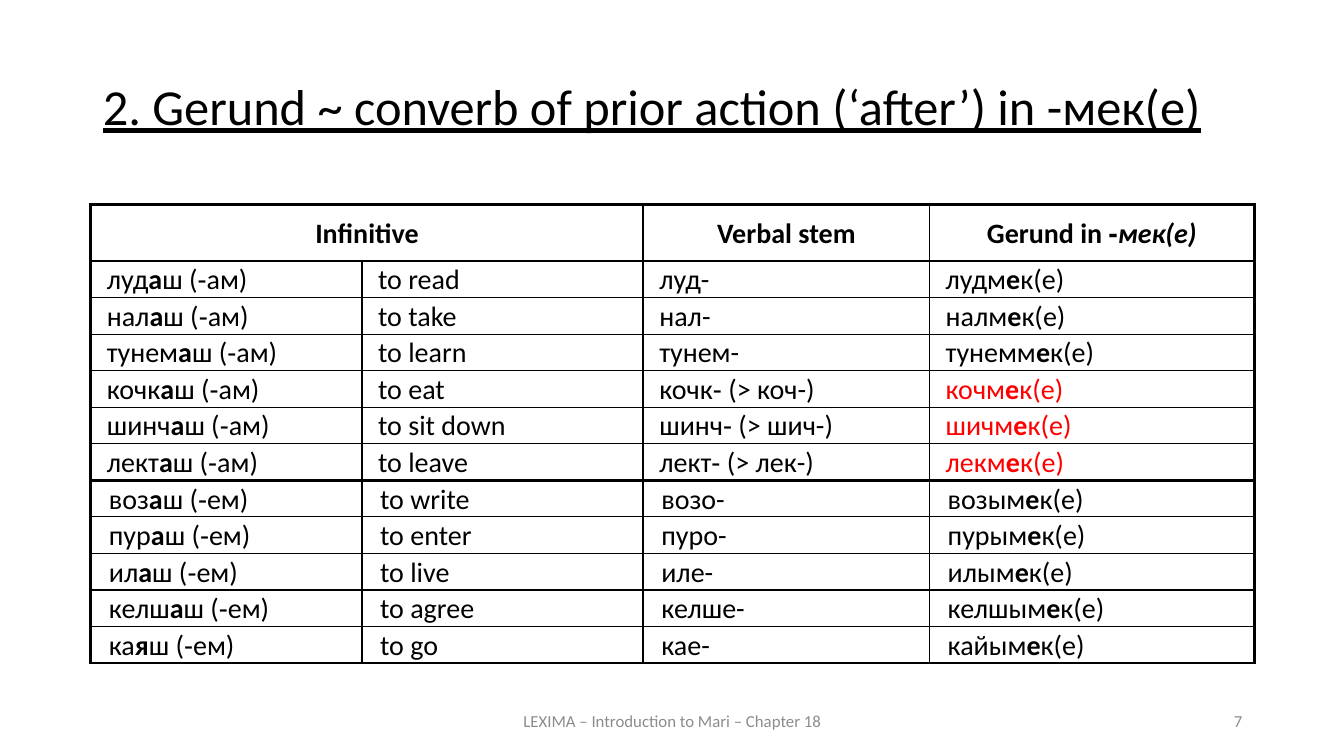
from dataclasses import dataclass

import pptx
import pptx.dml.color
import pptx.enum.text
import pptx.oxml
import pptx.oxml.ns
import pptx.util

Inches = pptx.util.Inches
Pt = pptx.util.Pt
RGB = pptx.dml.color.RGBColor
ALIGN = pptx.enum.text.PP_ALIGN
ANCHOR = pptx.enum.text.MSO_ANCHOR


@dataclass(frozen=True)
class Theme:
    font: str = "Calibri"
    ink: str = "000000"
    accent: str = "FF0000"
    muted: str = "8C8C8C"
    title_size: int = 36
    table_size: int = 20
    footer_size: int = 12
    thin: float = 1
    medium: float = 1.5
    thick: float = 2.25


THEME = Theme()

# Verb groups: conjugation ending, side inset, then
# (infinitive stem, stressed vowel, meaning, verbal stem, gerund stem, highlighted)
VERB_GROUPS = [
    ("ам", 0.16, [
        ("луд", "а", "to read", "луд-", "лудм", False),
        ("нал", "а", "to take", "нал-", "налм", False),
        ("тунем", "а", "to learn", "тунем-", "тунемм", False),
        ("кочк", "а", "to eat", "кочк‑ (> коч-)", "кочм", True),
        ("шинч", "а", "to sit down", "шинч‑ (> шич-)", "шичм", True),
        ("лект", "а", "to leave", "лект‑ (> лек-)", "лекм", True),
    ]),
    ("ем", 0.18, [
        ("воз", "а", "to write", "возо-", "возым", False),
        ("пур", "а", "to enter", "пуро-", "пурым", False),
        ("ил", "а", "to live", "иле-", "илым", False),
        ("келш", "а", "to agree", "келше-", "келшым", False),
        ("ка", "я", "to go", "кае-", "кайым", False),
    ]),
]

COLUMN_WIDTHS = [2.69, 2.79, 2.84, 3.22]
HEADER_HEIGHT, TABLE_HEIGHT = 0.56, 4.55


def add_run(p, text, size, color=THEME.ink, bold=False, italic=False):
    r = p.add_run()
    r.text = text
    r.font.name = THEME.font
    r.font.size = Pt(size)
    r.font.color.rgb = RGB.from_string(color)
    r.font.bold = bold
    r.font.italic = italic
    return r


def add_title(s, text):
    sp = s.shapes.title
    sp.left, sp.top = Inches(0.92), Inches(0.76)
    sp.width, sp.height = Inches(11.5), Inches(0.83)
    tf = sp.text_frame
    tf.auto_size = pptx.enum.text.MSO_AUTO_SIZE.NONE
    tf.vertical_anchor = ANCHOR.TOP
    p = tf.paragraphs[0]
    p.alignment = ALIGN.JUSTIFY
    p.line_spacing = 0.9
    add_run(p, text, THEME.title_size).font.underline = True


def add_footer(s, text, left, width, align):
    sp = s.shapes.add_textbox(Inches(left), Inches(6.95), Inches(width), Inches(0.4))
    tf = sp.text_frame
    tf.word_wrap = True
    tf.vertical_anchor = ANCHOR.MIDDLE
    p = tf.paragraphs[0]
    p.alignment = align
    add_run(p, text, THEME.footer_size, THEME.muted)


def set_border(cell, side, width):
    ln = pptx.oxml.parse_xml(
        f'<a:ln{side} {pptx.oxml.ns.nsdecls("a")} w="{Pt(width)}">'
        f'<a:solidFill><a:srgbClr val="{THEME.ink}"/></a:solidFill></a:ln{side}>')
    cell._tc.get_or_add_tcPr().append(ln)


def fill_cell(cell, runs, inset, align=ALIGN.JUSTIFY, color=THEME.ink):
    """Write (text, bold, italic) runs into a cell."""
    cell.margin_left = cell.margin_right = Inches(inset)
    cell.margin_top, cell.margin_bottom = Inches(0.02), 0
    p = cell.text_frame.paragraphs[0]
    p.alignment = align
    for text, bold, italic in runs:
        add_run(p, text, THEME.table_size, color, bold, italic)


def stressed(before, vowel, after):
    return [(before, False, False), (vowel, True, False), (after, False, False)]


def draw_grid(table):
    """Thick frame, header rule and group rule; thin lines elsewhere."""
    v = [THEME.thick, THEME.thin, THEME.medium, THEME.medium, THEME.thick]
    h = [THEME.thin] * (len(table.rows) + 1)
    h[0] = h[-1] = h[1] = THEME.thick
    h[1 + len(VERB_GROUPS[0][2])] = THEME.thick
    for i, row in enumerate(table.rows):
        for j, cell in enumerate(row.cells):
            if not cell.is_spanned:
                set_border(cell, "L", v[j])
            set_border(cell, "R", v[j + (2 if cell.is_merge_origin else 1)])
            set_border(cell, "T", h[i])
            set_border(cell, "B", h[i + 1])
            cell.fill.background()


def add_verb_table(s):
    n = sum(len(verbs) for _, _, verbs in VERB_GROUPS)
    table = s.shapes.add_table(n + 1, len(COLUMN_WIDTHS), Inches(0.9), Inches(2.03),
                               Inches(sum(COLUMN_WIDTHS)), Inches(TABLE_HEIGHT)).table
    table.first_row = table.horz_banding = False
    for column, width in zip(table.columns, COLUMN_WIDTHS):
        column.width = Inches(width)
    for row in table.rows:
        row.height = Inches((TABLE_HEIGHT - HEADER_HEIGHT) / n)
    table.rows[0].height = Inches(HEADER_HEIGHT)

    # Header row
    table.cell(0, 0).merge(table.cell(0, 1))
    headers = {0: [("Infinitive", True, False)],
               2: [("Verbal stem", True, False)],
               3: [("Gerund in ‑", True, False), ("мек(е)", True, True)]}
    for j, runs in headers.items():
        cell = table.cell(0, j)
        fill_cell(cell, runs, 0.16, ALIGN.CENTER)
        cell.vertical_anchor = ANCHOR.MIDDLE

    # Verb rows
    i = 0
    for ending, inset, verbs in VERB_GROUPS:
        for stem, vowel, meaning, verbal_stem, gerund, highlighted in verbs:
            i += 1
            fill_cell(table.cell(i, 0), stressed(stem, vowel, f"ш (‑{ending})"), inset)
            fill_cell(table.cell(i, 1), [(meaning, False, False)], inset)
            fill_cell(table.cell(i, 2), [(verbal_stem, False, False)], inset)
            fill_cell(table.cell(i, 3), stressed(gerund, "е", "к(е)"), inset,
                      color=THEME.accent if highlighted else THEME.ink)
    draw_grid(table)


def main():
    prs = pptx.Presentation()
    prs.slide_width, prs.slide_height = Inches(13.33), Inches(7.5)
    s = prs.slides.add_slide(prs.slide_layouts.get_by_name("Title Only"))
    add_title(s, "2. Gerund ~ converb of prior action (‘after’) in -мек(е)")
    add_verb_table(s)
    add_footer(s, "LEXIMA – Introduction to Mari – Chapter 18", 4.42, 4.5, ALIGN.CENTER)
    add_footer(s, "7", 9.42, 3, ALIGN.RIGHT)
    prs.save("out.pptx")


if __name__ == "__main__":
    main()
